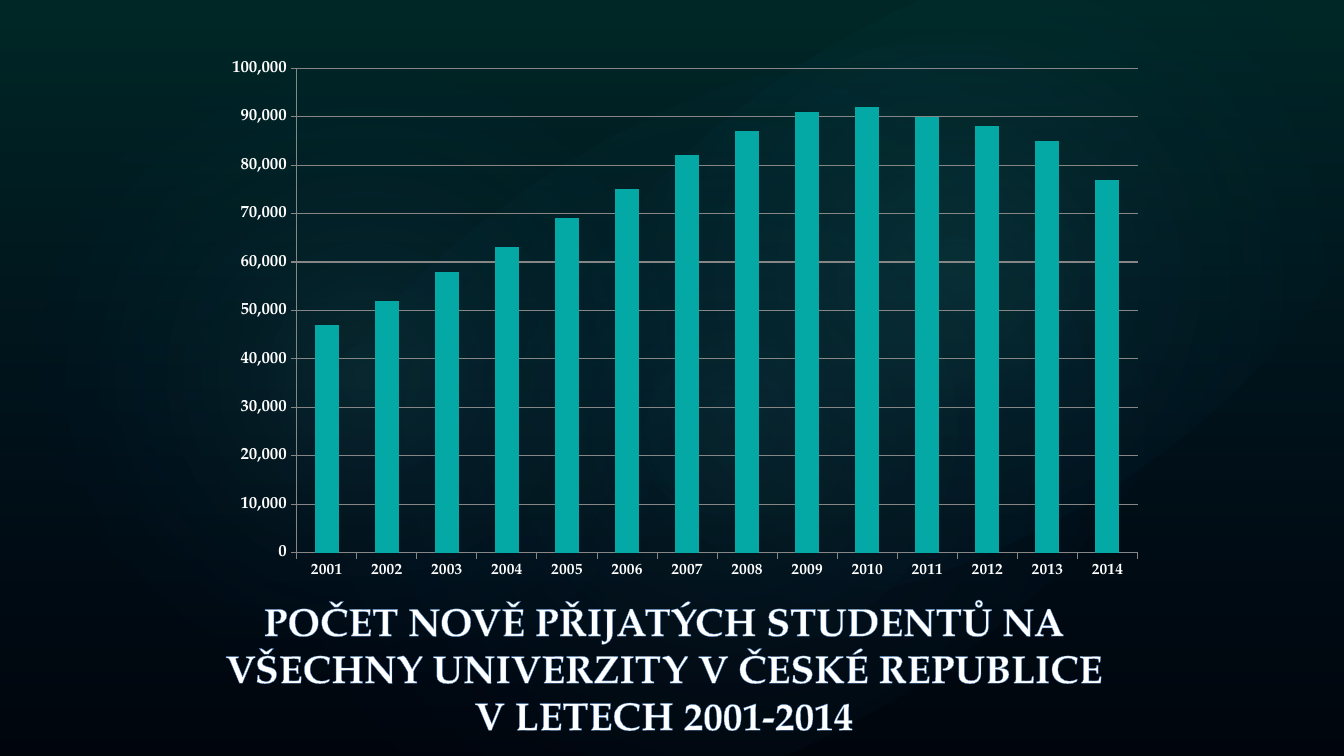
"""Build a slide charting newly admitted university students, 2001-2014."""
from pptx import Presentation, util as u
from pptx.chart.data import CategoryChartData
from pptx.dml.color import RGBColor
from pptx.enum import chart as ch, shapes, text
from pptx.oxml import parse_xml
from pptx.oxml.ns import nsdecls

COLORS = {"bg": "000000", "teal": "03706E", "blue": "073E87", "glow": "5AFBF8",
          "bar": "04A8A4", "text": "FFFFFF", "edge": "467AB8", "grid": "868686"}
RGB = {name: RGBColor.from_string(value) for name, value in COLORS.items()}
FONT = "TeX Gyre Pagella"

prs = Presentation()
prs.slide_width, prs.slide_height = u.Inches(13.333), u.Inches(7.5)
COL, ROW = prs.slide_width / 100, prs.slide_height / 100
s = prs.slides.add_slide(prs.slide_layouts[6])
s.background.fill.solid()
s.background.fill.fore_color.rgb = RGB["bg"]


def place(left, top, width, height):
    """Turn columns and rows of a 100 by 100 grid into slide lengths."""
    return [int(n) for n in (left * COL, top * ROW, width * COL, height * ROW)]


def add_gradient(kind, at, rotation, stops, direction):
    """Add a shape filled with a translucent gradient."""
    sp = s.shapes.add_shape(kind, *place(*at))
    sp.rotation = rotation
    sp.shadow.inherit = False
    sp.line.fill.background()
    sp.fill.background()
    gs = "".join(
        f'<a:gs pos="{pos * 1000}"><a:srgbClr val="{COLORS[name]}">'
        f'<a:alpha val="{alpha * 1000}"/></a:srgbClr></a:gs>' for pos, name, alpha in stops)
    grad = parse_xml(f'<a:gradFill {nsdecls("a")} rotWithShape="1"><a:gsLst>{gs}</a:gsLst>'
                     f'{direction}</a:gradFill>')
    props = sp._element.spPr
    props.replace(props.find("{*}noFill"), grad)


add_gradient(shapes.MSO_SHAPE.RECTANGLE, (0, 0, 100, 100), 0,
             [(0, "teal", 36), (100, "blue", 10)], '<a:lin ang="5400000" scaled="0"/>')
radial = ('<a:path path="circle"><a:fillToRect l="50000" t="50000" r="50000" b="50000"/>'
          '</a:path>')
for at, rotation, alpha in [((15, 15.2, 79.2, 83.2), 328.7, 7),
                            ((4.6, 6.1, 45.4, 87.1), 294.3, 8),
                            ((35.85, 1.7, 70.9, 69.3), 328.7, 8)]:
    add_gradient(shapes.MSO_SHAPE.OVAL, at, rotation,
                 [(0, "glow", alpha), (58, "blue", 0)], radial)

tf = s.shapes.add_textbox(*place(14.55, 78.3, 69.7, 20)).text_frame
tf.word_wrap = True
tf.vertical_anchor = text.MSO_ANCHOR.TOP
p = tf.paragraphs[0]
p.alignment = text.PP_ALIGN.CENTER
p.text = ("POČET NOVĚ PŘIJATÝCH STUDENTŮ NA VŠECHNY UNIVERZITY V ČESKÉ REPUBLICE"
          "\vV LETECH 2001-2014")
for r in p.runs:
    for key, value in {"name": FONT, "size": u.Pt(28), "bold": True}.items():
        setattr(r.font, key, value)
    r.font.color.rgb = RGB["text"]
    r._r.get_or_add_rPr().insert(0, parse_xml(
        f'<a:ln {nsdecls("a")} w="{u.Pt(0.83)}"><a:solidFill>'
        f'<a:srgbClr val="{COLORS["edge"]}"/></a:solidFill></a:ln>'))

admitted = [47000, 52000, 58000, 63000, 69000, 75000, 82000,
            87000, 91000, 92000, 90000, 88000, 85000, 77000]
data = CategoryChartData(number_format="#,##0")
data.categories = [str(year) for year in range(2001, 2015)]
data.add_series("Series 1", admitted)
chart = s.shapes.add_chart(ch.XL_CHART_TYPE.COLUMN_CLUSTERED,
                           *place(15.75, 6.9, 70.3, 71.2), data).chart
chart.has_legend = chart.has_title = False
chart.font.name, chart.font.size = FONT, u.Pt(10)
chart.font.color.rgb = RGB["text"]
plot = chart.plots[0]
plot.gap_width, plot.vary_by_categories = 150, False
bars = plot.series[0].format.fill
bars.solid()
bars.fore_color.rgb = RGB["bar"]

years, counts = chart.category_axis, chart.value_axis
years.has_major_gridlines, counts.has_major_gridlines = False, True
for key, value in {"minimum_scale": 0, "maximum_scale": 100000, "major_unit": 10000}.items():
    setattr(counts, key, value)
counts.tick_labels.number_format = "#,##0"
counts.tick_labels.number_format_is_linked = False
for axis, size in [(years, 11), (counts, 12)]:
    axis.major_tick_mark = ch.XL_TICK_MARK.OUTSIDE
    axis.minor_tick_mark = ch.XL_TICK_MARK.NONE
    for key, value in {"name": FONT, "size": u.Pt(size), "bold": True}.items():
        setattr(axis.tick_labels.font, key, value)
    axis.tick_labels.font.color.rgb = RGB["text"]
for line in (years.format.line, counts.format.line, counts.major_gridlines.format.line):
    line.color.rgb = RGB["grid"]
    line.width = u.Pt(0.75)

area = plot._element.getparent()
for old in area.findall("{*}layout"):
    area.remove(old)
share = "".join(f'<c:{key} val="{value}"/>' for key, value in
                {"x": 0.09, "y": 0.03, "w": 0.89, "h": 0.9}.items())
area.insert(0, parse_xml(
    f'<c:layout {nsdecls("c")}><c:manualLayout><c:layoutTarget val="inner"/>'
    f'<c:xMode val="edge"/><c:yMode val="edge"/>{share}</c:manualLayout></c:layout>'))

prs.save("out.pptx")
